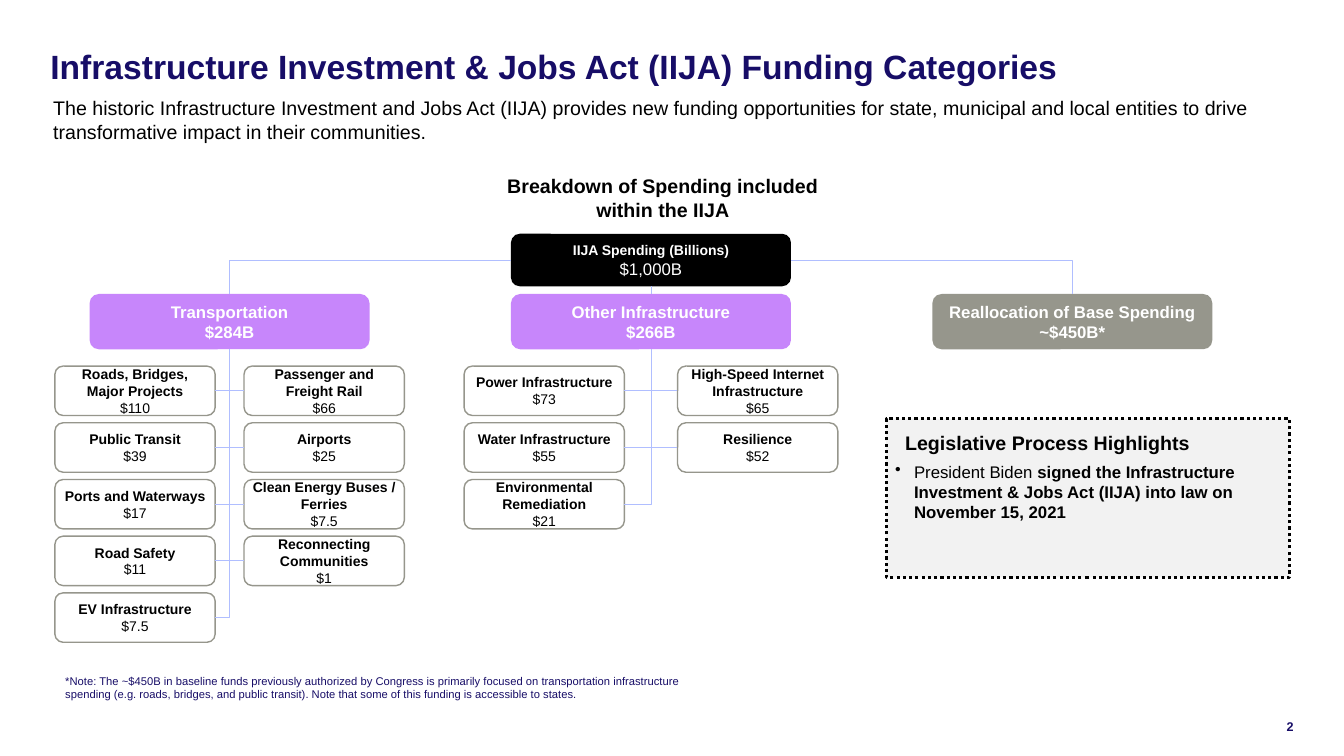
import dataclasses

import lxml.etree
import pptx
import pptx.dml.color
import pptx.enum.dml
import pptx.enum.shapes
import pptx.enum.text
import pptx.oxml.ns
import pptx.util

Pt = pptx.util.Pt
Align = pptx.enum.text.PP_ALIGN
Anchor = pptx.enum.text.MSO_ANCHOR
Shape = pptx.enum.shapes.MSO_SHAPE
Connector = pptx.enum.shapes.MSO_CONNECTOR
TOP, LEFT, BOTTOM, RIGHT = range(4)


@dataclasses.dataclass(frozen=True)
class Theme:
    font: str = "Arial"
    navy: str = "170D67"
    black: str = "000000"
    white: str = "FFFFFF"
    purple: str = "C786FB"
    gray: str = "96968C"
    panel: str = "F2F2F2"
    link: str = "B0BEFF"
    title: float = 24
    lead: float = 14
    body: float = 12
    item: float = 10
    page_number: float = 9
    note: float = 8


theme = Theme()

TRANSPORTATION = [
    [("Roads, Bridges, Major Projects", "$110"), ("Public Transit", "$39"),
     ("Ports and Waterways", "$17"), ("Road Safety", "$11"), ("EV Infrastructure", "$7.5")],
    [("Passenger and Freight Rail", "$66"), ("Airports", "$25"),
     ("Clean Energy Buses / Ferries", "$7.5"), ("Reconnecting Communities", "$1")],
]
OTHER = [
    [("Power Infrastructure", "$73"), ("Water Infrastructure", "$55"),
     ("Environmental Remediation", "$21")],
    [("High-Speed Internet Infrastructure", "$65"), ("Resilience", "$52")],
]


def color(value):
    return pptx.dml.color.RGBColor.from_string(value)


def style(span, size, ink, bold):
    span.font.name = theme.font
    span.font.size = Pt(size)
    span.font.bold = bold
    span.font.color.rgb = color(ink)


def write(shape, lines, ink, align=Align.LEFT, anchor=Anchor.TOP, inset=(0, 0), wrap=True):
    frame = shape.text_frame
    frame.text = "\n".join(text for text, size, bold in lines)
    frame.word_wrap = wrap
    frame.vertical_anchor = anchor
    frame.margin_left = frame.margin_right = Pt(inset[0])
    frame.margin_top = frame.margin_bottom = Pt(inset[1])
    for para, (text, size, bold) in zip(frame.paragraphs, lines):
        para.alignment = align
        style(para.runs[0], size, ink, bold)
    return frame


def add_text(shapes, box, text, size, ink, bold=False, **options):
    shape = shapes.add_textbox(*map(Pt, box))
    return write(shape, [(text, size, bold)], ink, **options)


def add_panel(shapes, kind, box, fill, line=None, width=1):
    shape = shapes.add_shape(kind, *map(Pt, box))
    shape.shadow.inherit = False
    shape.fill.solid()
    shape.fill.fore_color.rgb = color(fill)
    if line:
        shape.line.color.rgb = color(line)
        shape.line.width = Pt(width)
    else:
        shape.line.fill.background()
    return shape


def add_node(page, box, lines, fill, ink=theme.white, line=None, inset=(0, 0)):
    node = add_panel(page.shapes, Shape.ROUNDED_RECTANGLE, box, fill, line)
    write(node, lines, ink, Align.CENTER, Anchor.MIDDLE, inset)
    return node


def link(page, start, start_site, end, end_site, kind=Connector.ELBOW):
    connector = page.shapes.add_connector(kind, 0, 0, 0, 0)
    connector.begin_connect(start, start_site)
    connector.end_connect(end, end_site)
    connector.line.color.rgb = color(theme.link)
    connector.line.width = Pt(0.5)
    properties = connector._element.spPr
    if kind == Connector.ELBOW:
        properties.find(pptx.oxml.ns.qn("a:prstGeom")).set("prst", "bentConnector2")
    lxml.etree.SubElement(properties, pptx.oxml.ns.qn("a:effectLst"))


def add_category(page, box, name, amount, fill):
    lines = [(name, theme.body, True), (amount, theme.body, True)]
    return add_node(page, box, lines, fill)


def add_items(page, parent, box, columns, gap):
    center, top, width, height, pitch = box
    sides = [(center - gap - width, RIGHT), (center + gap, LEFT)]
    for (left, site), column in zip(sides, columns):
        for row, (name, amount) in enumerate(column):
            lines = [(name, theme.item, True), (amount, theme.item, False)]
            item = add_node(page, (left, top + row * pitch, width, height), lines,
                            theme.white, theme.black, theme.gray, (3.6, 7.2))
            link(page, item, site, parent, BOTTOM)


def add_spending_tree(page, box):
    left, top, width = box
    node_width = 200
    pitch = (width - node_width) / 2
    root_lines = [("IIJA Spending (Billions)", theme.item, True), ("$1,000B", theme.body, False)]
    root = add_node(page, (left + pitch, top, node_width, 37.5), root_lines, theme.black)
    categories = [
        ("Transportation", "$284B", theme.purple),
        ("Other Infrastructure", "$266B", theme.purple),
        ("Reallocation of Base Spending", "~$450B*", theme.gray),
    ]
    nodes = [add_category(page, (left + index * pitch, top + 43, node_width, 39.5), *category)
             for index, category in enumerate(categories)]
    link(page, root, LEFT, nodes[0], TOP)
    link(page, root, BOTTOM, nodes[1], TOP, Connector.STRAIGHT)
    link(page, root, RIGHT, nodes[2], TOP)
    for index, (columns, gap) in enumerate([(TRANSPORTATION, 10.3), (OTHER, 19)]):
        center = left + index * pitch + node_width / 2
        add_items(page, nodes[index], (center, top + 94.5, 114.5, 35.3, 40.5), columns, gap)


def add_highlights(page, box):
    left, top, width, height = box
    shapes = page.shapes.add_group_shape().shapes
    panel = add_panel(shapes, Shape.RECTANGLE, box, theme.panel, theme.black, 2.25)
    panel.line.dash_style = pptx.enum.dml.MSO_LINE.ROUND_DOT
    add_text(shapes, (left + 6.4, top + 5, 219, 24.5), "Legislative Process Highlights",
             theme.lead, theme.black, True, inset=(7.2, 3.6), wrap=False)
    frame = add_text(shapes, (left + 6.4, top + 30.5, 272, 80), "President Biden ",
                     theme.body, theme.black)
    para = frame.paragraphs[0]
    properties = para._p.get_or_add_pPr()
    properties.set("marL", str(Pt(13.5)))
    properties.set("indent", str(-Pt(13.5)))
    bullet = lxml.etree.SubElement(properties, pptx.oxml.ns.qn("a:buChar"))
    bullet.set("char", "•")
    span = para.add_run()
    span.text = "signed the Infrastructure Investment & Jobs Act (IIJA) into law on November 15, 2021"
    style(span, theme.body, theme.black, True)


def add_header(page, box):
    left, top, width = box
    frame = add_text(page.shapes, (left, top, width, 72),
                     "Infrastructure Investment & Jobs Act (IIJA) Funding Categories",
                     theme.title, theme.navy, True)
    frame.paragraphs[0].line_spacing = 0.9
    add_text(page.shapes, (left + 2, top + 32.5, width - 9, 51),
             "The historic Infrastructure Investment and Jobs Act (IIJA) provides new funding "
             "opportunities for state, municipal and local entities to drive transformative "
             "impact in their communities.", theme.lead, theme.black)
    add_text(page.shapes, (left + 303, top + 85, 269, 41),
             "Breakdown of Spending included within the IIJA", theme.lead, theme.black, True,
             align=Align.CENTER, inset=(7.2, 3.6))


def add_footer(page, box):
    left, top, width = box
    add_text(page.shapes, (left, top, 480, 26.6),
             "*Note: The ~$450B in baseline funds previously authorized by Congress is primarily "
             "focused on transportation infrastructure spending (e.g. roads, bridges, and public "
             "transit). Note that some of this funding is accessible to states.",
             theme.note, theme.navy, inset=(7.2, 3.6))
    add_text(page.shapes, (left + width - 36, top + 28, 36, 18), "2", theme.page_number,
             theme.navy, True, align=Align.RIGHT, anchor=Anchor.BOTTOM, wrap=False)


def main():
    deck = pptx.Presentation()
    deck.slide_width, deck.slide_height = Pt(960), Pt(540)
    page = deck.slides.add_slide(deck.slide_layouts[6])
    add_header(page, (36, 36, 903))
    add_spending_tree(page, (64, 167, 802))
    add_highlights(page, (633, 299, 288, 113.5))
    add_footer(page, (39.5, 478, 884.5))
    deck.save("out.pptx")


if __name__ == "__main__":
    main()
